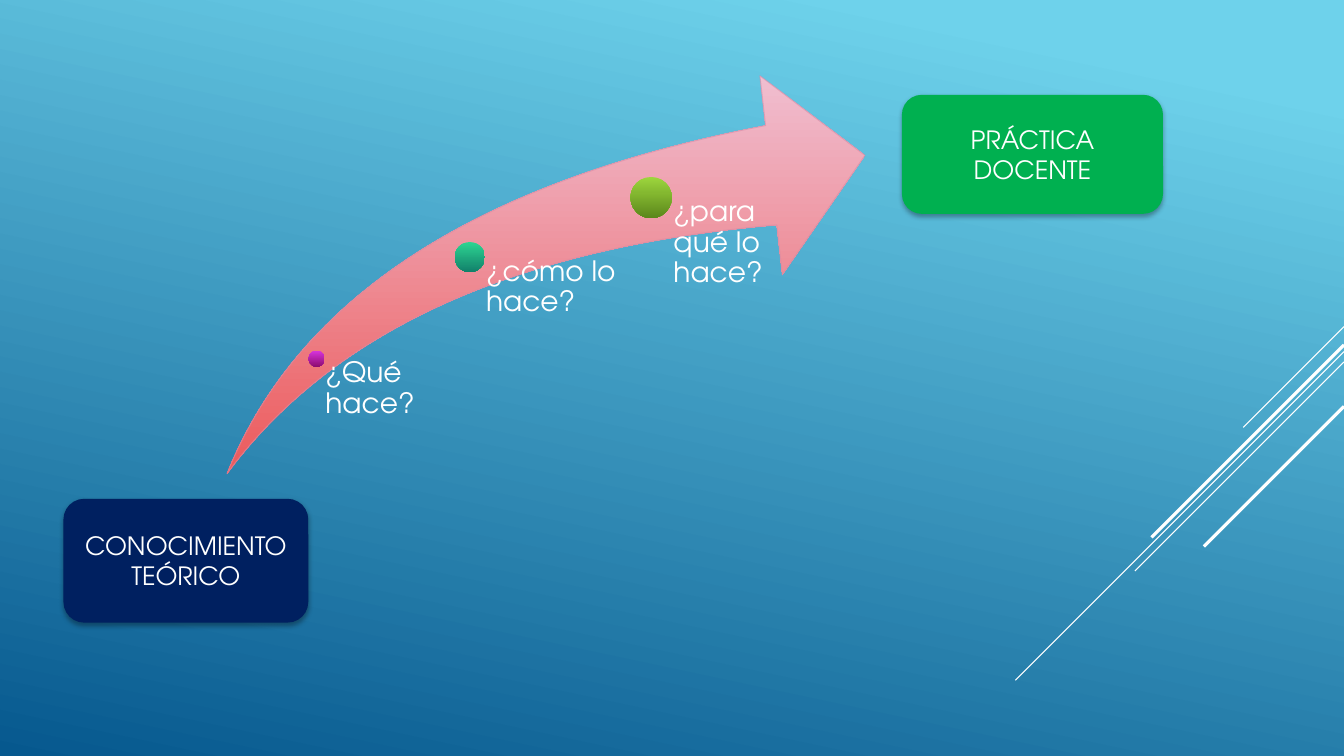
from dataclasses import dataclass

from lxml import etree
from pptx import Presentation
from pptx import util as u
from pptx.dml.color import RGBColor
from pptx.dml.fill import FillFormat
from pptx.enum import shapes, text
from pptx.oxml import parse_xml
from pptx.oxml.ns import nsdecls, qn
from pptx.shapes.autoshape import Shape
from pptx.slide import Slide
from pptx.text.text import TextFrame


@dataclass(frozen=True)
class Gradient:
    start: str
    end: str
    angle: float = 90
    start_position: float = 0


@dataclass(frozen=True)
class Theme:
    font: str = "TeX Gyre Adventor"
    white: str = "FFFFFF"
    navy: str = "002060"
    green: str = "00B050"
    arrow_outline: str = "D68BA6"
    background: Gradient = Gradient("6ED2EB", "06588E", 102, 0.1)
    arrow: Gradient = Gradient("F0BED0", "EC5A5B")
    magenta_dot: Gradient = Gradient("D835DF", "8D0C6F")
    teal_dot: Gradient = Gradient("2ED592", "11806A")
    lime_dot: Gradient = Gradient("9DD63D", "5B871B")
    question_size: int = 20
    box_size: int = 18


@dataclass(frozen=True)
class Ray:
    top: float
    reach: float
    weight: float = 0.75


@dataclass(frozen=True)
class Milestone:
    question: str
    center_x: float
    center_y: float
    diameter: float
    text_width: float
    gradient: Gradient


@dataclass(frozen=True)
class Box:
    label: str
    left: float
    top: float
    width: float
    height: float
    color: str


THEME = Theme()
SLIDE_WIDTH, SLIDE_HEIGHT = 33.87, 19.05
ARROW_LEFT, ARROW_TOP, ARROW_WIDTH, ARROW_HEIGHT = 5.72, 1.91, 16.08, 10.03

RAYS = [
    Ray(8.23, 2.54),
    Ray(8.86, 8.28),
    Ray(9.12, 5.27),
    Ray(8.69, 4.85, 2.25),
    Ray(10.24, 3.53, 2.25),
]
MILESTONES = [
    Milestone("¿Qué hace?", 7.98, 9.04, 0.41, 3.73, THEME.magenta_dot),
    Milestone("¿cómo lo hace?", 11.84, 6.48, 0.76, 3.86, THEME.teal_dot),
    Milestone("¿para qué lo hace?", 16.41, 4.98, 1.04, 3.86, THEME.lime_dot),
]
BOXES = [
    Box("CONOCIMIENTO TEÓRICO", 1.6, 12.57, 6.17, 3.12, THEME.navy),
    Box("PRÁCTICA DOCENTE", 22.73, 2.39, 6.58, 3, THEME.green),
]


def apply_gradient(fill: FillFormat, gradient: Gradient) -> None:
    """Fill with two stops; the angle runs clockwise."""
    fill.gradient()
    fill.gradient_angle = 360 - gradient.angle
    first, last = fill.gradient_stops
    first.color.rgb = RGBColor.from_string(gradient.start)
    first.position = gradient.start_position
    last.color.rgb = RGBColor.from_string(gradient.end)
    last.position = 1


def write_text(frame: TextFrame, wording: str, size: int) -> None:
    frame.text = wording
    frame.word_wrap = True
    font = frame.paragraphs[0].runs[0].font
    font.name = THEME.font
    font.size = u.Pt(size)
    font.color.rgb = RGBColor.from_string(THEME.white)


def add_plain_shape(slide: Slide, kind: shapes.MSO_SHAPE, left: float,
                    top: float, width: float, height: float) -> Shape:
    """Add a preset shape, in centimetres, without shadow or outline."""
    shape = slide.shapes.add_shape(
        kind, u.Cm(left), u.Cm(top), u.Cm(width), u.Cm(height))
    shape.shadow.inherit = False
    shape.line.fill.background()
    return shape


def add_ray(slide: Slide, ray: Ray) -> None:
    """Draw a 45° line down and left from the slide's right edge."""
    line = slide.shapes.add_connector(
        shapes.MSO_CONNECTOR.STRAIGHT,
        u.Cm(SLIDE_WIDTH), u.Cm(ray.top),
        u.Cm(SLIDE_WIDTH - ray.reach), u.Cm(ray.top + ray.reach))
    line.line.color.rgb = RGBColor.from_string(THEME.white)
    line.line.width = u.Pt(ray.weight)
    etree.SubElement(line._element.spPr, qn("a:effectLst"))


def add_arrow(slide: Slide) -> None:
    arrow = add_plain_shape(slide, shapes.MSO_SHAPE.SWOOSH_ARROW, ARROW_LEFT,
                            ARROW_TOP, ARROW_WIDTH, ARROW_HEIGHT)
    arrow.adjustments[0] = 0.25
    arrow.adjustments[1] = 0.25
    apply_gradient(arrow.fill, THEME.arrow)
    arrow.line.color.rgb = RGBColor.from_string(THEME.arrow_outline)
    arrow.line.width = u.Pt(0.75)
    color = arrow._element.spPr.find(qn("a:ln")).find(".//" + qn("a:srgbClr"))
    etree.SubElement(color, qn("a:alpha"), val="60000")


def add_milestone(slide: Slide, milestone: Milestone) -> None:
    """Draw a dot, and its question from the dot's centre to the arrow's foot."""
    diameter = milestone.diameter
    dot = add_plain_shape(slide, shapes.MSO_SHAPE.OVAL,
                          milestone.center_x - diameter / 2,
                          milestone.center_y - diameter / 2,
                          diameter, diameter)
    apply_gradient(dot.fill, milestone.gradient)

    text_height = ARROW_TOP + ARROW_HEIGHT - milestone.center_y
    question = slide.shapes.add_textbox(
        u.Cm(milestone.center_x), u.Cm(milestone.center_y),
        u.Cm(milestone.text_width), u.Cm(text_height))
    frame = question.text_frame
    write_text(frame, milestone.question, THEME.question_size)
    frame.margin_left = u.Cm(0.54 * diameter)
    frame.margin_top = frame.margin_right = frame.margin_bottom = 0
    frame.paragraphs[0].line_spacing = 0.9


def add_box(slide: Slide, box: Box) -> None:
    shape = add_plain_shape(slide, shapes.MSO_SHAPE.ROUNDED_RECTANGLE,
                            box.left, box.top, box.width, box.height)
    shape.fill.solid()
    shape.fill.fore_color.rgb = RGBColor.from_string(box.color)
    write_text(shape.text_frame, box.label, THEME.box_size)
    shape.text_frame.vertical_anchor = text.MSO_ANCHOR.MIDDLE
    shape.text_frame.paragraphs[0].alignment = text.PP_ALIGN.CENTER
    effects = shape._element.spPr.find(qn("a:effectLst"))
    effects.append(parse_xml(
        f'<a:outerShdw {nsdecls("a")} blurRad="{u.Pt(3.5)}" '
        f'dist="{u.Pt(2.2)}" dir="5400000" algn="ctr" rotWithShape="0">'
        '<a:srgbClr val="000000"><a:alpha val="32000"/></a:srgbClr>'
        '</a:outerShdw>'))


def main() -> None:
    presentation = Presentation()
    presentation.slide_width = u.Cm(SLIDE_WIDTH)
    presentation.slide_height = u.Cm(SLIDE_HEIGHT)
    slide = presentation.slides.add_slide(presentation.slide_layouts[6])
    apply_gradient(slide.background.fill, THEME.background)
    for ray in RAYS:
        add_ray(slide, ray)
    add_arrow(slide)
    for milestone in MILESTONES:
        add_milestone(slide, milestone)
    for box in BOXES:
        add_box(slide, box)
    presentation.save("out.pptx")


if __name__ == "__main__":
    main()
